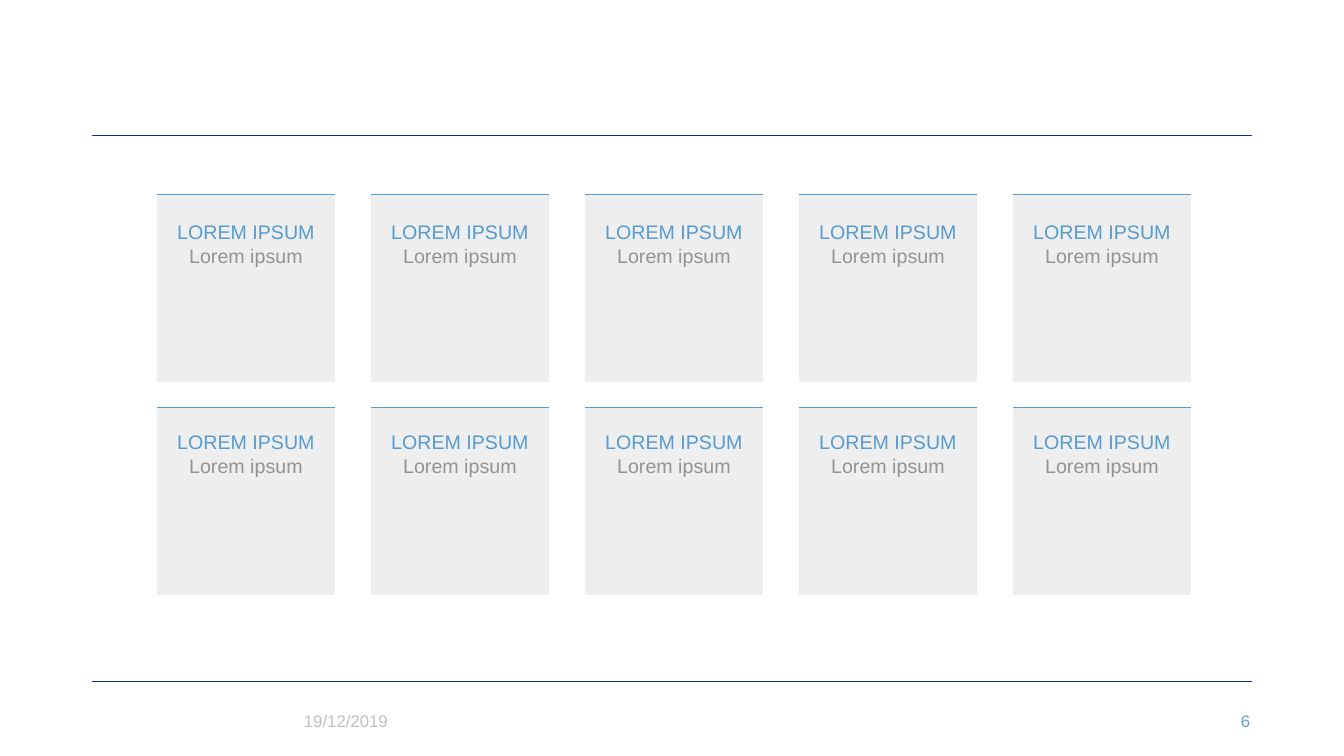
from dataclasses import dataclass
from itertools import product

from pptx import Presentation
from pptx.dml.color import RGBColor
from pptx.enum.shapes import MSO_CONNECTOR as Connector, MSO_SHAPE as Shape
from pptx.enum.text import MSO_ANCHOR as Anchor, PP_ALIGN as Align
from pptx.oxml import parse_xml
from pptx.oxml.ns import nsdecls
from pptx.util import Pt


@dataclass(frozen=True)
class Theme:
    font: str = "Arial"
    card_size: int = 14
    footer_size: int = 12
    rule: str = "0C377B"
    accent: str = "569BCE"
    body: str = "939393"
    card: str = "EEEEEE"
    date: str = "BFBFBF"
    number: str = "5AA3D9"


theme = Theme()
PX = 914400 / 100.8

presentation = Presentation()
presentation.slide_width = round(1344 * PX)
presentation.slide_height = round(756 * PX)
slide = presentation.slides.add_slide(presentation.slide_layouts[6])


def add_text(box, *lines, size, align=Align.LEFT, anchor=Anchor.TOP):
    frame = slide.shapes.add_textbox(*(round(v * PX) for v in box)).text_frame
    frame.word_wrap = True
    frame.vertical_anchor = anchor
    for index, (text, color) in enumerate(lines):
        paragraph = frame.paragraphs[0] if index == 0 else frame.add_paragraph()
        paragraph.alignment = align
        run = paragraph.add_run()
        run.text = text
        run.font.name = theme.font
        run.font.size = Pt(size)
        run.font.color.rgb = RGBColor.from_string(color)


def add_rule(left, top, width, color, weight):
    ends = (round(v * PX) for v in (left, top, left + width, top))
    rule = slide.shapes.add_connector(Connector.STRAIGHT, *ends)
    rule.line.color.rgb = RGBColor.from_string(color)
    rule.line.width = Pt(weight)
    rule._element.spPr.append(parse_xml(f"<a:effectLst {nsdecls('a')}/>"))


for rule_top in (681, 135):
    add_rule(92, rule_top, 1160, theme.rule, 0.5)

add_text((294, 701, 121, 40), ("19/12/2019", theme.date),
         size=theme.footer_size, anchor=Anchor.MIDDLE)
add_text((1186, 701, 74, 40), ("6", theme.number),
         size=theme.footer_size, align=Align.RIGHT, anchor=Anchor.MIDDLE)

CARD_LEFT, CARD_PITCH, CARD_WIDTH, CARD_HEIGHT = 157, 214, 178, 187
ROWS = ((195, 215), (408, 425))

for (card_top, text_top), column in product(ROWS, range(5)):
    left = CARD_LEFT + column * CARD_PITCH
    bounds = (round(v * PX) for v in (left, card_top, CARD_WIDTH, CARD_HEIGHT))
    card = slide.shapes.add_shape(Shape.RECTANGLE, *bounds)
    card.shadow.inherit = False
    card.fill.solid()
    card.fill.fore_color.rgb = RGBColor.from_string(theme.card)
    card.line.fill.background()
    add_rule(left, card_top, CARD_WIDTH, theme.accent, 0.75)
    add_text((left, text_top, CARD_WIDTH, 57),
             ("LOREM IPSUM", theme.accent), ("Lorem ipsum", theme.body),
             size=theme.card_size, align=Align.CENTER)

presentation.save("out.pptx")
